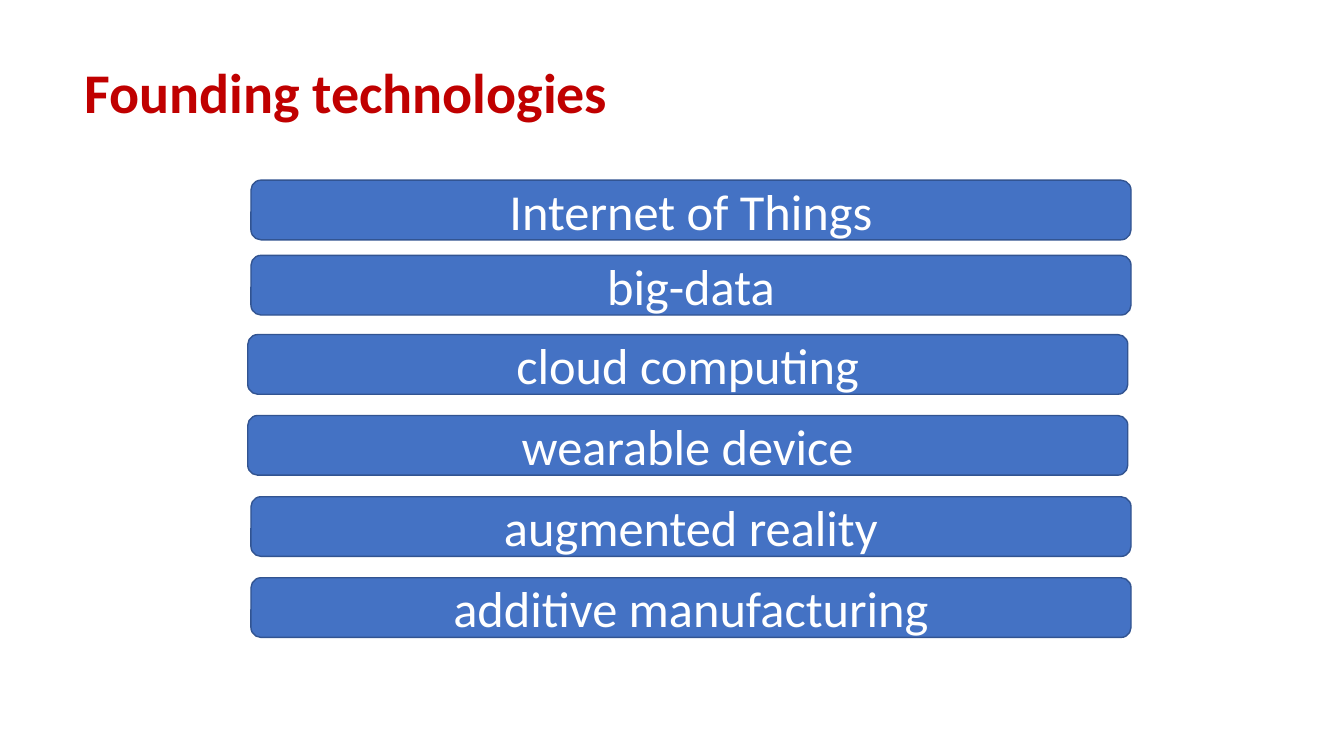
from pptx import Presentation
from pptx import util as u
from pptx.dml.color import RGBColor
from pptx.enum import shapes, text


def color(value):
    return RGBColor.from_string(value)


def write(frame, words, size=36, fill="FFFFFF", bold=False,
          align=text.PP_ALIGN.LEFT, font="Calibri"):
    para = frame.paragraphs[0]
    para.alignment = align
    span = para.add_run()
    span.text = words
    span.font.name = font
    span.font.size = u.Pt(size)
    span.font.bold = bold
    span.font.color.rgb = color(fill)


class SlideBuilder:
    title_color = "C00000"
    bar_fill = "4472C4"
    bar_line = "325491"

    def __init__(self, page):
        self.page = page

    def title(self, words, *bounds):
        box = self.page.shapes.add_textbox(*map(u.Pt, bounds))
        frame = box.text_frame
        frame.word_wrap = True
        frame.auto_size = text.MSO_AUTO_SIZE.SHAPE_TO_FIT_TEXT
        write(frame, words, size=40, fill=self.title_color, bold=True)

    def bar(self, words, *bounds):
        box = self.page.shapes.add_shape(
            shapes.MSO_SHAPE.ROUNDED_RECTANGLE, *map(u.Pt, bounds))
        box.shadow.inherit = False
        box.fill.solid()
        box.fill.fore_color.rgb = color(self.bar_fill)
        box.line.color.rgb = color(self.bar_line)
        box.line.width = u.Pt(1)
        frame = box.text_frame
        frame.word_wrap = True
        frame.vertical_anchor = text.MSO_ANCHOR.MIDDLE
        write(frame, words, align=text.PP_ALIGN.CENTER)


def main():
    deck = Presentation()
    deck.slide_width = u.Pt(960)
    deck.slide_height = u.Pt(540)
    page = deck.slides.add_slide(deck.slide_layouts[6])
    builder = SlideBuilder(page)
    builder.title("Founding technologies", 53.3, 37.4, 479.5, 55.4)
    technologies = [
        ("Internet of Things", 179.3, 128.7),
        ("big-data", 179.3, 182.4),
        ("cloud computing", 177, 239),
        ("wearable device", 177, 296.8),
        ("augmented reality", 179.3, 354.8),
        ("additive manufacturing", 179.3, 412.7),
    ]
    for words, left, top in technologies:
        builder.bar(words, left, top, 628.6, 42.6)
    deck.save("out.pptx")


if __name__ == "__main__":
    main()
